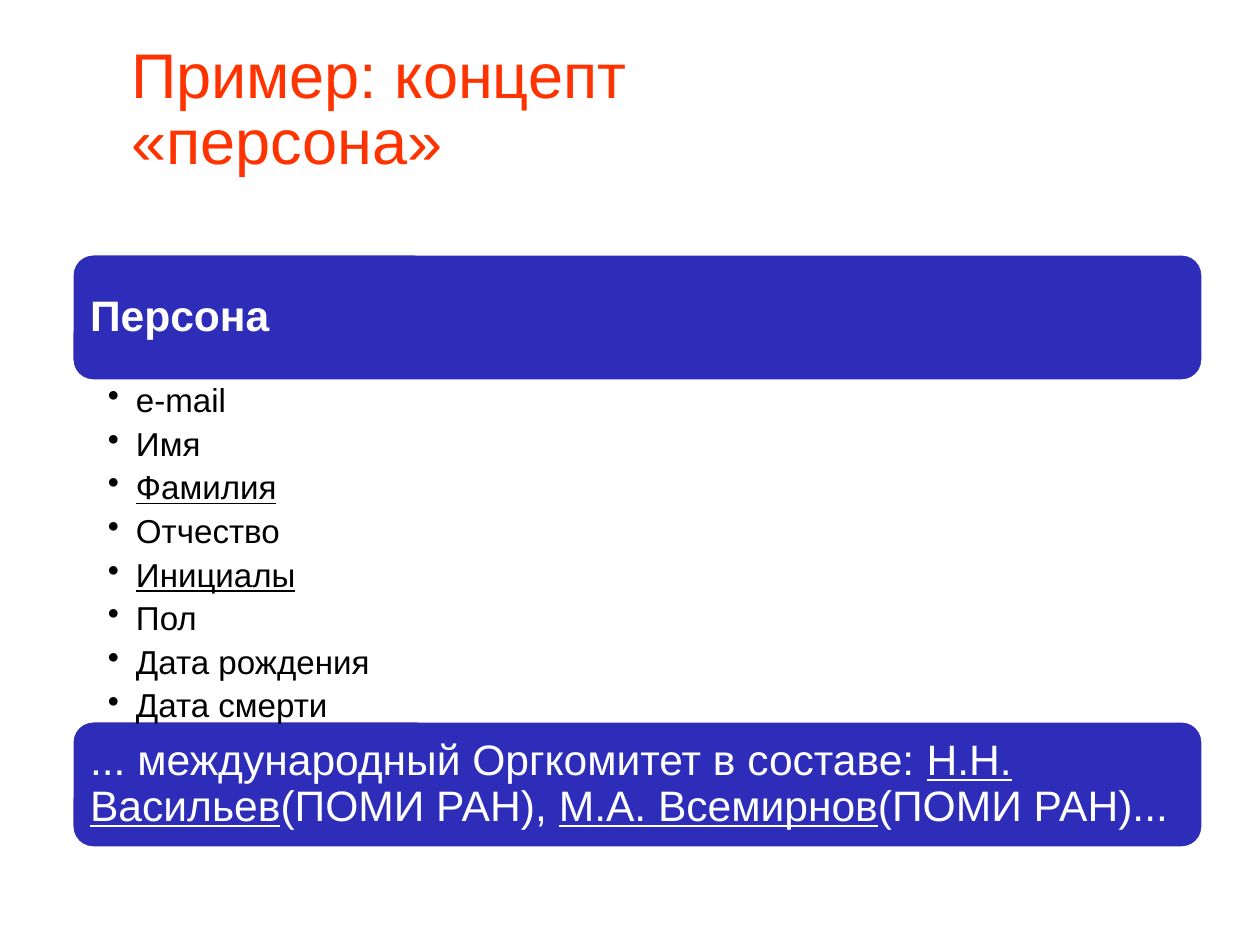
from pptx import Presentation
from pptx.dml.color import RGBColor
from pptx.enum.shapes import MSO_SHAPE as Shape
from pptx.enum.text import MSO_ANCHOR as Anchor, MSO_AUTO_SIZE as Fit, PP_ALIGN as Align
from pptx.util import Pt
from lxml import etree

PX = 914400 / 113.5
RED = RGBColor(0xFF, 0x33, 0x00)
BLUE = RGBColor(0x2D, 0x2D, 0xB9)
WHITE = RGBColor(0xFF, 0xFF, 0xFF)
BLACK = RGBColor(0x00, 0x00, 0x00)
DRAW = "{http://schemas.openxmlformats.org/drawingml/2006/main}"


def px(*sizes):
    return [round(size * PX) for size in sizes]


def write(shape, *lines, size, color, bold=False, bullet=False, pads=(12, 12, 12, 12),
          anchor=Anchor.MIDDLE, spacing=0.9, after=0):
    frame = shape.text_frame
    frame.word_wrap = True
    frame.auto_size = Fit.NONE
    frame.vertical_anchor = anchor
    (frame.margin_left, frame.margin_top,
     frame.margin_right, frame.margin_bottom) = px(*pads)
    for row, line in enumerate(lines):
        para = frame.add_paragraph() if row else frame.paragraphs[0]
        para.alignment = Align.LEFT
        para.line_spacing = spacing
        para.space_before = Pt(0)
        para.space_after = Pt(after)
        if bullet:
            props = para._p.get_or_add_pPr()
            indent, = px(28)
            props.set("marL", str(indent))
            props.set("indent", str(-indent))
            etree.SubElement(props, DRAW + "buChar", char="•")
        for turn, piece in enumerate(line.split("_")):
            if piece:
                run = para.add_run()
                run.text = piece
                font = run.font
                font.name = "Arial"
                font.size = Pt(size)
                font.bold = bold
                font.underline = turn % 2 == 1
                font.color.rgb = color


deck = Presentation()
deck.slide_width, deck.slide_height = px(1260, 942)
slide = deck.slides.add_slide(deck.slide_layouts[5])

title = slide.shapes.title
title.left, title.top, title.width, title.height = px(119, 65, 842, 93)
write(title, "Пример: концепт «персона»", size=40, color=RED,
      pads=(12, 7, 12, 7), spacing=0.87)

bands = [
    (254, "Персона", True),
    (721, "... международный Оргкомитет в составе: _Н.Н. Васильев_(ПОМИ РАН), "
          "_М.А. Всемирнов_(ПОМИ РАН)...", False),
]
for top, text, bold in bands:
    band = slide.shapes.add_shape(Shape.ROUNDED_RECTANGLE, *px(72, top, 1131, 127))
    band.shadow.inherit = False
    band.fill.solid()
    band.fill.fore_color.rgb = BLUE
    band.line.color.rgb = WHITE
    band.line.width = Pt(2)
    write(band, text, size=27, color=WHITE, bold=bold)

traits = slide.shapes.add_textbox(*px(72, 380, 1131, 340))
write(traits, "e-mail", "Имя", "_Фамилия_", "Отчество", "_Инициалы_", "Пол",
      "Дата рождения", "Дата смерти", size=21, color=BLACK, bullet=True,
      pads=(36, 4, 24, 4), anchor=Anchor.TOP, after=5)

deck.save("out.pptx")
